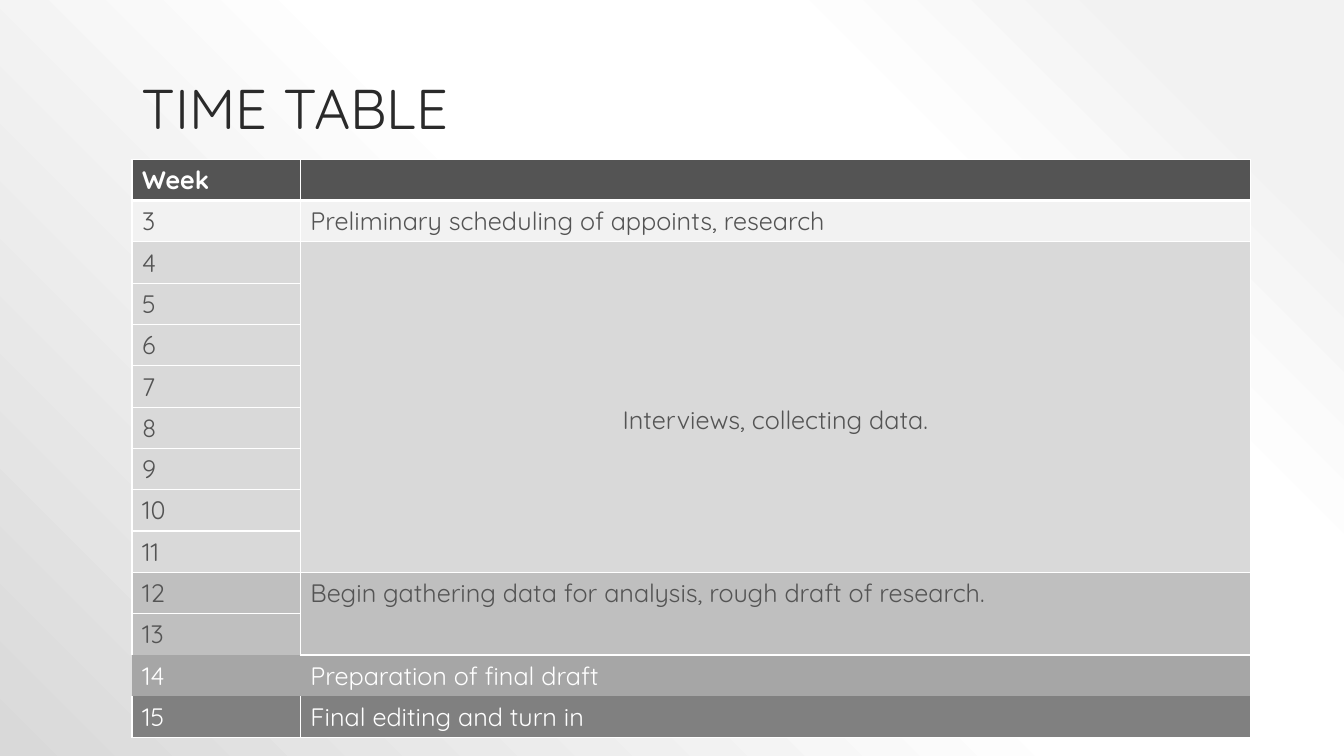
"""Build a project time table slide."""
import pptx
import pptx.dml.color
import pptx.enum.text
import pptx.oxml
import pptx.oxml.ns
import pptx.util
from pptx.util import Inches

COLORS = {
    "title": "2A2A2A", "text": "545454", "white": "FFFFFF", "header": "545454",
    "prelim": "F2F2F2", "collect": "D9D9D9", "analyse": "BFBFBF",
    "draft": "A6A6A6", "final": "808080",
}
BACKGROUND = [(10, "prelim"), (28, "white"), (48, "white"), (100, "collect")]
PHASES = [
    (["Week"], "", "header", "white"),
    (["3"], "Preliminary scheduling of appoints, research", "prelim", "text"),
    ([str(n) for n in range(4, 12)], "Interviews, collecting data.", "collect", "text"),
    (["12", "13"], "Begin gathering data for analysis, rough draft of research.",
     "analyse", "text"),
    (["14"], "Preparation of final draft", "draft", "white"),
    (["15"], "Final editing and turn in", "final", "white"),
]
ROW_HEIGHT = 0.41
HEADER_ROW, DRAFT_ROW = 0, 12


def rgb(name):
    """Return the named colour."""
    return pptx.dml.color.RGBColor.from_string(COLORS[name])


def xml(tag, inner, attrs=""):
    """Parse one DrawingML element."""
    ns = pptx.oxml.ns.nsdecls("a")
    return pptx.oxml.parse_xml(f"<a:{tag} {ns} {attrs}>{inner}</a:{tag}>")


def color_fill(name):
    """Return the markup of a solid fill's colour."""
    return f'<a:srgbClr val="{COLORS[name]}"/>'


def set_background(s):
    """Fill the background with a radial gradient from the top right."""
    s.background.fill.gradient()
    grad = next(s.element.iter(pptx.oxml.ns.qn("a:gradFill")))
    for child in list(grad):
        grad.remove(child)
    stops = "".join(f'<a:gs pos="{pos * 1000}">{color_fill(name)}</a:gs>'
                    for pos, name in BACKGROUND)
    grad.append(xml("gsLst", stops))
    grad.append(xml("path", '<a:fillToRect l="100000" b="100000"/>', 'path="circle"'))


def write(tf, text, color, **formats):
    """Write one run of text and return its paragraph."""
    p = tf.paragraphs[0]
    r = p.add_run()
    r.text = text
    r.font.color.rgb = rgb(color)
    for key, value in {"name": "Quicksand", "size": pptx.util.Pt(18), **formats}.items():
        setattr(r.font, key, value)
    return p


def add_title(s, text):
    """Add the bottom-anchored title."""
    tf = s.shapes.add_textbox(Inches(1.31), 0, Inches(10.67), Inches(1.45)).text_frame
    tf.word_wrap = True
    tf.vertical_anchor = pptx.enum.text.MSO_ANCHOR.BOTTOM
    write(tf, text, "title", size=pptx.util.Pt(40)).line_spacing = 0.9


def set_borders(cell, row):
    """Draw white borders, with none around the draft row."""
    widths = {"L": 1, "R": 1, "T": 1, "B": 1}
    if row == HEADER_ROW:
        widths["B"] = 3
    elif row == HEADER_ROW + 1:
        widths["T"] = 3
    elif row == DRAFT_ROW - 1:
        widths["B"] = 0
    elif row == DRAFT_ROW:
        widths = dict.fromkeys(widths, 0)
    elif row == DRAFT_ROW + 1:
        widths["T"] = 0
    tcPr = cell._tc.get_or_add_tcPr()
    for side, width in widths.items():
        fill = f"<a:solidFill>{color_fill('white')}</a:solidFill>" if width else "<a:noFill/>"
        tcPr.append(xml(f"ln{side}", fill, f'w="{pptx.util.Pt(width)}"'))


def add_phase(table, top, weeks, task, fill, color):
    """Fill the rows of one phase and merge its task cells."""
    bold = top == HEADER_ROW
    for row, week in enumerate(weeks, top):
        for col in range(2):
            cell = table.cell(row, col)
            set_borders(cell, row)
            cell.fill.solid()
            cell.fill.fore_color.rgb = rgb(fill)
        write(table.cell(row, 0).text_frame, week, color, bold=bold)
    cell = table.cell(top, 1)
    if len(weeks) > 1:
        cell.merge(table.cell(top + len(weeks) - 1, 1))
    if task:
        p = write(cell.text_frame, task, color, bold=bold)
        if fill == "collect":
            p.alignment = pptx.enum.text.PP_ALIGN.CENTER
            cell.margin_top = Inches(1.61)


def add_timetable(s):
    """Add the table of weeks and tasks."""
    rows = sum(len(phase[0]) for phase in PHASES)
    table = s.shapes.add_table(rows, 2, Inches(1.31), Inches(1.58), Inches(11.09),
                               Inches(ROW_HEIGHT * rows)).table
    for column, width in zip(table.columns, (1.67, 9.42)):
        column.width = Inches(width)
    top = 0
    for phase in PHASES:
        add_phase(table, top, *phase)
        top += len(phase[0])


def main():
    """Build and save the slide."""
    prs = pptx.Presentation()
    prs.slide_width, prs.slide_height = Inches(13.33), Inches(7.5)
    s = prs.slides.add_slide(prs.slide_layouts[6])
    set_background(s)
    add_title(s, "TIME TABLE")
    add_timetable(s)
    prs.save("out.pptx")


if __name__ == "__main__":
    main()
